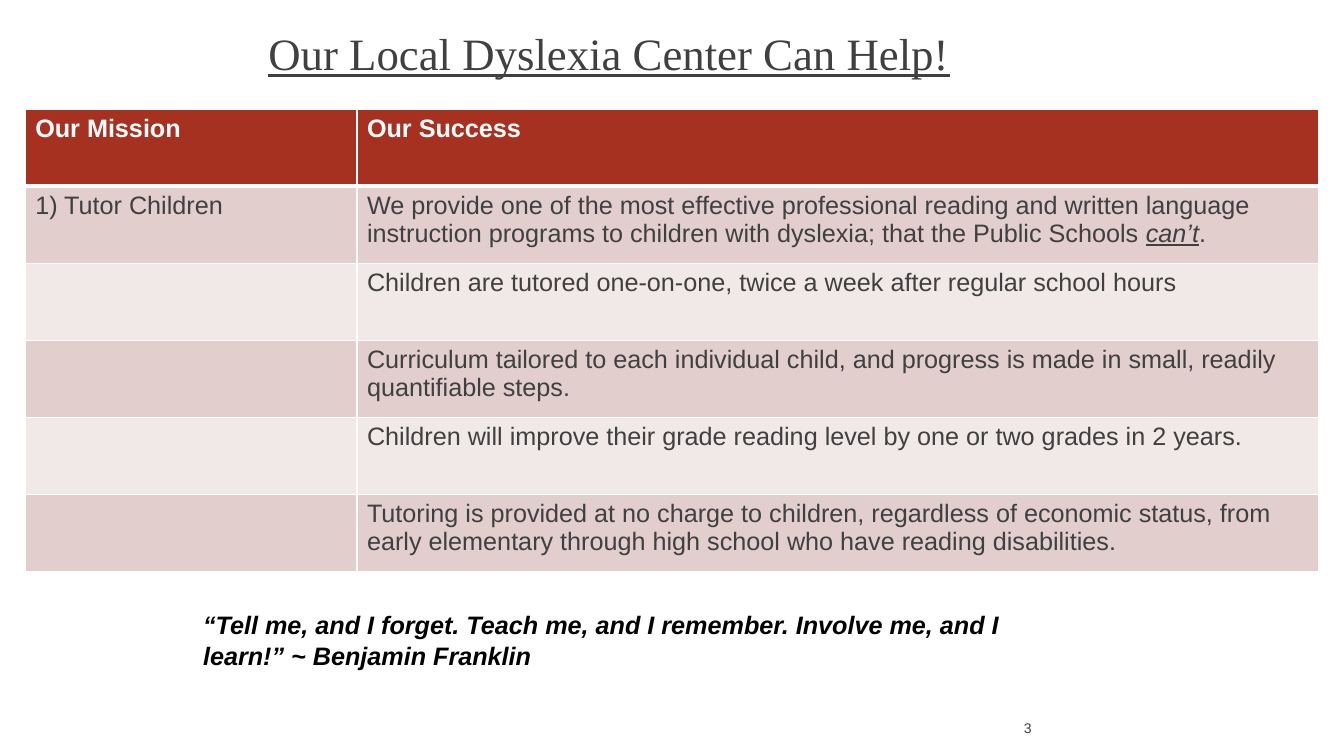
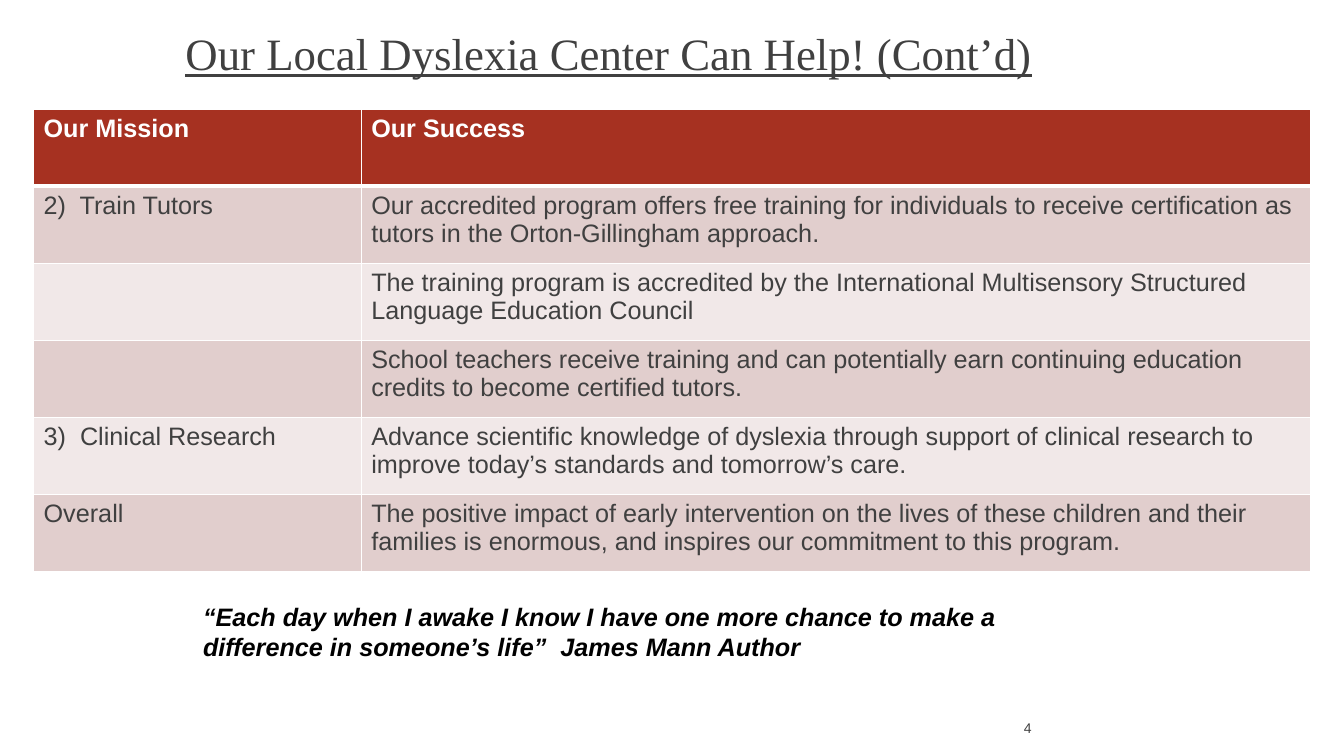
from dataclasses import dataclass

from lxml.etree import SubElement
from pptx import Presentation
from pptx.dml.color import RGBColor
from pptx.enum.text import MSO_ANCHOR as Anchor, PP_ALIGN as Align
from pptx.oxml.ns import qn
from pptx.util import Pt


@dataclass(frozen=True)
class Theme:
    header: str = "A63121"
    bands: tuple[str, str] = ("E1CECD", "F1E8E8")
    white: str = "FFFFFF"
    black: str = "000000"
    text: str = "404040"
    title_font: str = "Times New Roman"
    body_font: str = "Arial"
    title_size: float = 32
    body_size: float = 18
    number_size: float = 10
    rule: float = 1
    header_rule: float = 3


@dataclass(frozen=True)
class Area:
    left: float
    top: float
    width: float
    height: float


@dataclass(frozen=True)
class Span:
    text: str
    italic: bool = False
    underline: bool = False


@dataclass(frozen=True)
class MissionPage:
    number: int
    title: str
    table_left: float
    columns: tuple[float, float]
    rows: list
    quote: str
    quote_area: Area


THEME = Theme()
TITLE_AREA = Area(78, 0, 714, 61)
NUMBER_AREA = Area(678, 505.5, 66, 29)
TABLE_TOP = 78
ROW_HEIGHT = 55
HEADINGS = ("Our Mission", "Our Success")

PAGES = [
    MissionPage(
        3, "Our Local Dyslexia Center Can Help!", 18, (237, 687),
        [
            ("1) Tutor Children", [
                Span("We provide one of the most effective professional reading and written "
                     "language instruction programs to children with dyslexia; that the "
                     "Public Schools "),
                Span("can’t", italic=True, underline=True),
                Span("."),
            ]),
            ("", "Children are tutored one-on-one, twice a week after regular school hours"),
            ("", "Curriculum tailored to each individual child, and progress is made in "
                 "small, readily quantifiable steps."),
            ("", "Children will improve their grade reading level by one or two grades "
                 "in 2 years."),
            ("", "Tutoring is provided at no charge to children, regardless of economic "
                 "status, from early elementary through high school who have reading "
                 "disabilities."),
        ],
        "“Tell me, and I forget. Teach me, and I remember. Involve me, and I learn!” "
        "~ Benjamin Franklin",
        Area(138, 432, 612, 42),
    ),
    MissionPage(
        4, "Our Local Dyslexia Center Can Help! (Cont’d)", 24, (234, 678),
        [
            ("2)  Train Tutors",
             "Our accredited program offers free training for individuals to receive "
             "certification as tutors in the Orton-Gillingham approach."),
            ("", "The training program is accredited by the International Multisensory "
                 "Structured Language Education Council"),
            ("", "School teachers receive training and can potentially earn continuing "
                 "education credits to become certified tutors."),
            ("3)  Clinical Research",
             "Advance scientific knowledge of dyslexia through support of clinical "
             "research to improve today’s standards and tomorrow’s care."),
            ("Overall",
             "The positive impact of early intervention on the lives of these children and "
             "their families is enormous, and inspires our commitment to this program."),
        ],
        "“Each day when I awake I know I have one more chance to make a difference in "
        "someone’s life”  James Mann Author",
        Area(138, 426, 612, 66),
    ),
]


def write(frame, content: str | list[Span], *, font: str = THEME.body_font,
          size: float = THEME.body_size, color: str = THEME.text, bold: bool = False,
          italic: bool = False, underline: bool = False, align: Align = Align.LEFT,
          line_spacing: float | None = None) -> None:
    """Fill the first paragraph of a text frame with one text or several spans."""
    para = frame.paragraphs[0]
    para.alignment = align
    para.line_spacing = line_spacing
    para.font.size = Pt(size)
    spans = [Span(content)] if isinstance(content, str) else content
    for span in spans:
        if not span.text:
            continue
        run = para.add_run()
        run.text = span.text
        run.font.name = font
        run.font.size = Pt(size)
        run.font.bold = bold
        run.font.italic = italic or span.italic
        run.font.underline = underline or span.underline
        run.font.color.rgb = RGBColor.from_string(color)


def add_text(page, area: Area, content: str, anchor: Anchor = Anchor.TOP, **style) -> None:
    box = page.shapes.add_textbox(Pt(area.left), Pt(area.top), Pt(area.width), Pt(area.height))
    box.text_frame.word_wrap = True
    box.text_frame.vertical_anchor = anchor
    write(box.text_frame, content, **style)


def set_borders(cell, top: float, bottom: float) -> None:
    properties = cell._tc.get_or_add_tcPr()
    widths = {"a:lnL": THEME.rule, "a:lnR": THEME.rule, "a:lnT": top, "a:lnB": bottom}
    for tag, width in widths.items():
        line = SubElement(properties, qn(tag), w=str(Pt(width)))
        fill = SubElement(line, qn("a:solidFill"))
        SubElement(fill, qn("a:srgbClr"), val=THEME.white)


def add_mission_table(page, content: MissionPage) -> None:
    rows = [HEADINGS, *content.rows]
    table = page.shapes.add_table(
        len(rows), len(content.columns), Pt(content.table_left), Pt(TABLE_TOP),
        Pt(sum(content.columns)), Pt(ROW_HEIGHT * len(rows))).table
    table.horz_banding = False
    for column, width in zip(table.columns, content.columns):
        column.width = Pt(width)
    for index, texts in enumerate(rows):
        table.rows[index].height = Pt(ROW_HEIGHT)
        is_header = index == 0
        fill = THEME.header if is_header else THEME.bands[(index - 1) % 2]
        for cell, text in zip(table.rows[index].cells, texts):
            set_borders(cell, top=THEME.header_rule if index == 1 else THEME.rule,
                        bottom=THEME.header_rule if is_header else THEME.rule)
            cell.fill.solid()
            cell.fill.fore_color.rgb = RGBColor.from_string(fill)
            write(cell.text_frame, text, bold=is_header,
                  color=THEME.white if is_header else THEME.text)


def add_mission_page(deck, content: MissionPage) -> None:
    page = deck.slides.add_slide(deck.slide_layouts[6])
    add_text(page, TITLE_AREA, content.title, Anchor.BOTTOM, font=THEME.title_font,
             size=THEME.title_size, underline=True, align=Align.CENTER, line_spacing=0.9)
    add_text(page, content.quote_area, content.quote, color=THEME.black,
             bold=True, italic=True)
    add_mission_table(page, content)
    add_text(page, NUMBER_AREA, str(content.number), Anchor.MIDDLE,
             size=THEME.number_size, align=Align.RIGHT)


def main() -> None:
    deck = Presentation()
    deck.slide_width, deck.slide_height = Pt(960), Pt(540)
    for content in PAGES:
        add_mission_page(deck, content)
    deck.save("out.pptx")


if __name__ == "__main__":
    main()
